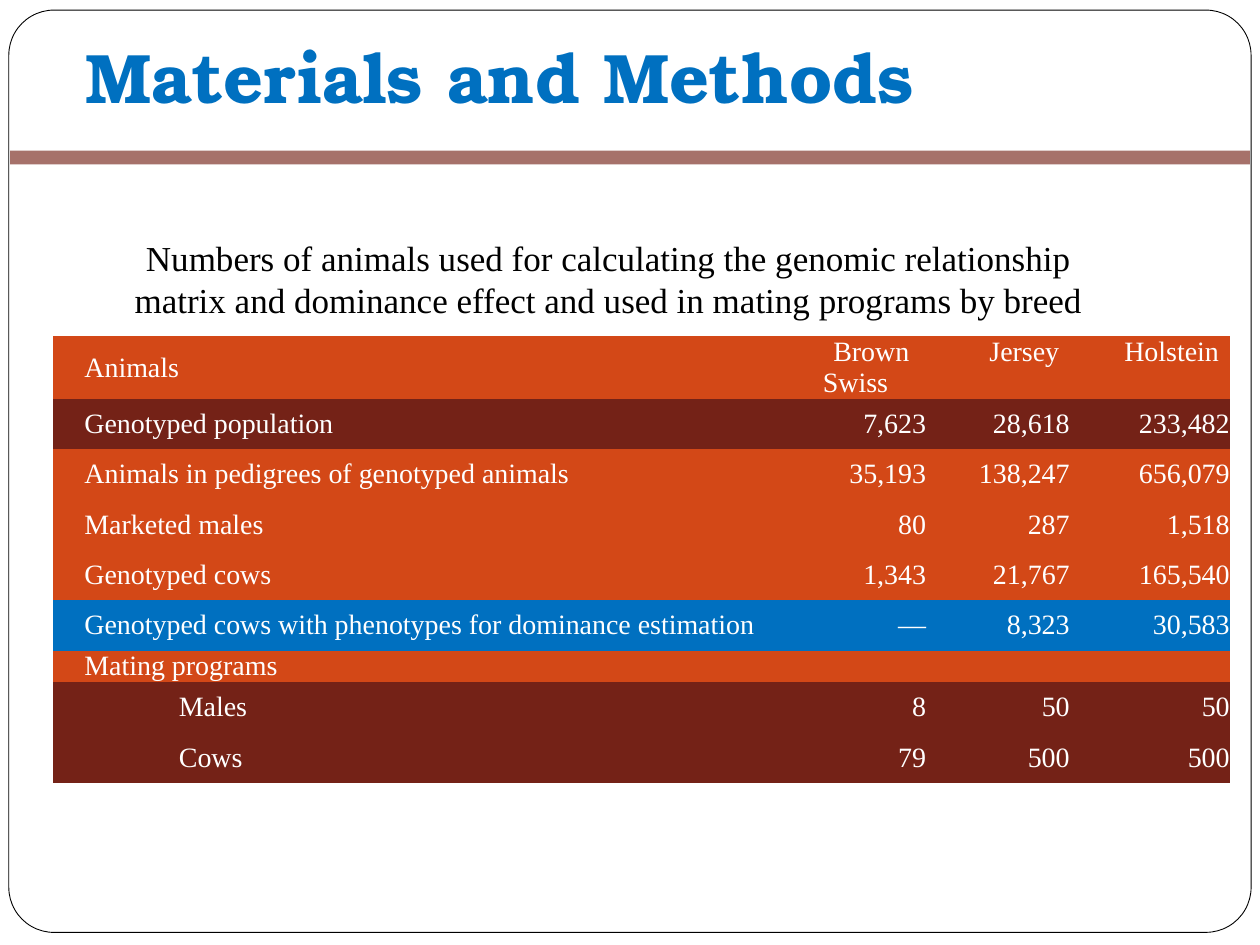
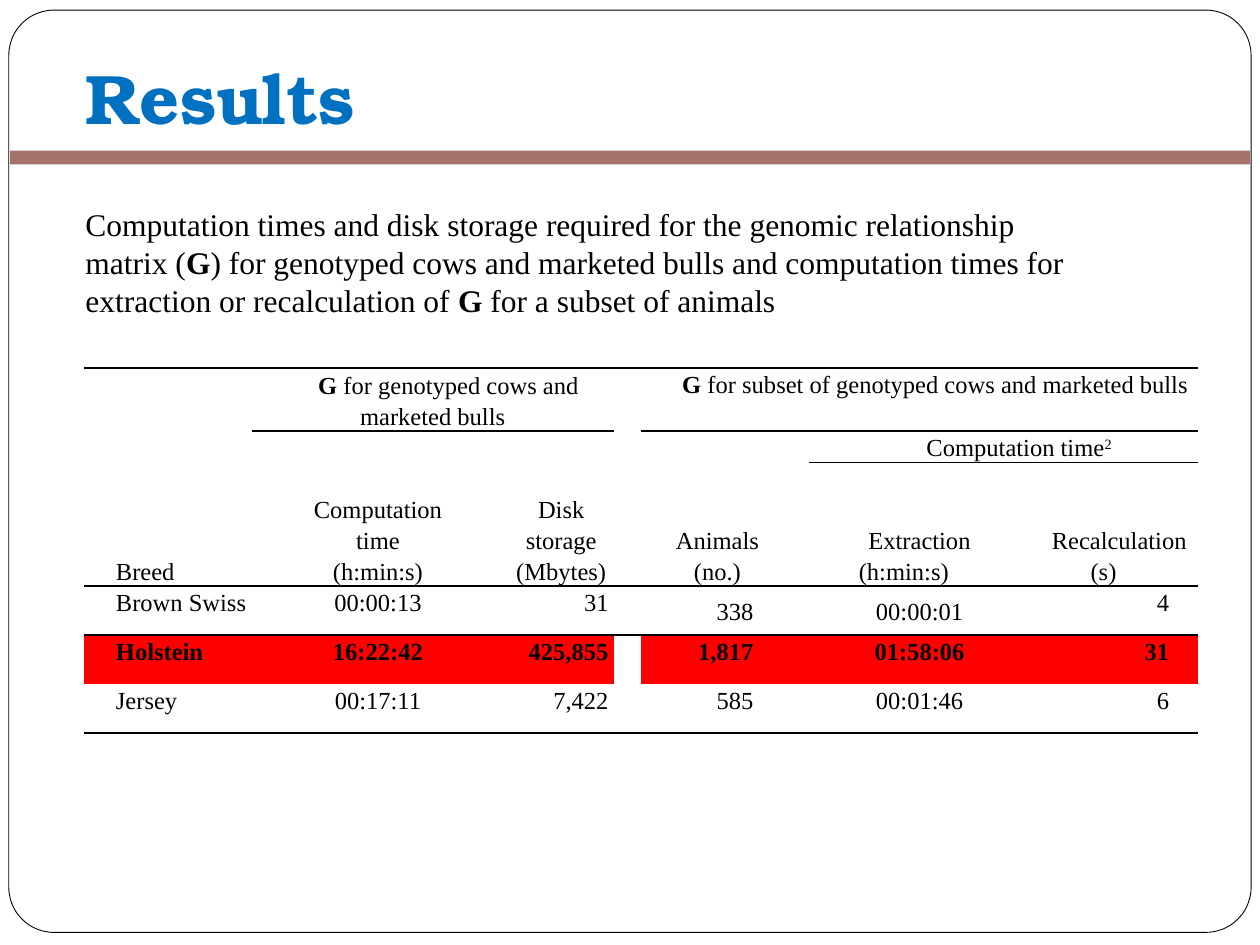
from lxml import etree
from pptx import Presentation
from pptx.dml.color import RGBColor
from pptx.enum import shapes, text
from pptx.oxml import ns
from pptx.util import Inches, Pt

BLACK, WHITE, BLUE = "000000", "FFFFFF", "0070C0"
ORANGE, MAROON, RED = "D34817", "742217", "FF0000"
TITLE_FONT, BODY_FONT = "TeX Gyre Bonum", "Times New Roman"
NO_TABLE_STYLE = "{2D5ABB26-0587-4C30-8999-92F81FD0307C}"
LEFT, CENTER, RIGHT = text.PP_ALIGN.LEFT, text.PP_ALIGN.CENTER, text.PP_ALIGN.RIGHT
TOP, MIDDLE, BOTTOM = text.MSO_ANCHOR.TOP, text.MSO_ANCHOR.MIDDLE, text.MSO_ANCHOR.BOTTOM


def rgb(value):
    return RGBColor.from_string(value)


def inches(*lengths):
    return [Inches(length) for length in lengths]


def style_font(font, size, color, name=BODY_FONT, bold=False):
    font.size, font.name, font.bold = Pt(size), name, bold
    font.color.rgb = rgb(color)


def add_marked_text(paragraph, marked):
    """Add runs; *stars* enclose bold text and ^ starts a superscript."""
    for i, part in enumerate(marked.split("*")):
        base, _, raised = part.partition("^")
        if base:
            run = paragraph.add_run()
            run.text = base
            if i % 2:
                run.font.bold = True
        if raised:
            run = paragraph.add_run()
            run.text = raised
            run.font._element.set("baseline", "30000")


def add_frame(slide):
    frame = slide.shapes.add_shape(
        shapes.MSO_SHAPE.ROUNDED_RECTANGLE, *inches(0.07, 0.08, 9.86, 7.32))
    frame.adjustments[0] = 0.049
    frame.shadow.inherit = False
    frame.fill.solid()
    frame.fill.fore_color.rgb = rgb(WHITE)
    frame.line.color.rgb = rgb(BLACK)
    frame.line.width = Pt(0.5)
    slide.shapes._spTree.insert(2, frame._element)


def add_title_rule(slide):
    rule = slide.shapes.add_connector(
        shapes.MSO_CONNECTOR.STRAIGHT, *inches(0.08, 1.25, 9.92, 1.25))
    rule.line.color.rgb = rgb(MAROON)
    rule.line.width = Pt(8)
    color = rule._element.spPr.find(".//" + ns.qn("a:srgbClr"))
    etree.SubElement(color, ns.qn("a:alpha")).set("val", "63000")
    etree.SubElement(rule._element.spPr, ns.qn("a:effectLst"))


def add_titled_slide(deck, heading, title_height):
    slide = deck.slides.add_slide(deck.slide_layouts[5])
    add_frame(slide)
    title = slide.shapes.title
    title.left, title.top, title.width, title.height = inches(
        0.58, 0.25, 8.5, title_height)
    frame = title.text_frame
    frame.text = heading
    frame.auto_size = text.MSO_AUTO_SIZE.NONE
    frame.vertical_anchor = BOTTOM
    frame.margin_bottom = Inches(0.1)
    frame.paragraphs[0].alignment = LEFT
    style_font(frame.paragraphs[0].font, 40, BLUE, TITLE_FONT, True)
    add_title_rule(slide)
    return slide


def add_caption(slide, box, marked, size, align):
    frame = slide.shapes.add_textbox(*inches(*box)).text_frame
    frame.word_wrap = True
    paragraph = frame.paragraphs[0]
    paragraph.alignment = align
    style_font(paragraph.font, size, BLACK)
    add_marked_text(paragraph, marked)


def add_plain_table(slide, left, top, widths, heights):
    table = slide.shapes.add_table(
        len(heights), len(widths),
        *inches(left, top, sum(widths), sum(heights))).table
    table.first_row = table.horz_banding = False
    table._tbl.tblPr.find(ns.qn("a:tableStyleId")).text = NO_TABLE_STYLE
    for column, width in zip(table.columns, widths):
        column.width = Inches(width)
    for row, height in zip(table.rows, heights):
        row.height = Inches(height)
    return table


def fill_cell(cell, marked, size, color, align=LEFT, anchor=TOP, fill=None,
              right=0, indent=0.25, spacing=None, bold=False):
    cell.margin_left = cell.margin_top = cell.margin_bottom = 0
    cell.margin_right = Inches(right)
    cell.vertical_anchor = anchor
    if fill:
        cell.fill.solid()
        cell.fill.fore_color.rgb = rgb(fill)
    else:
        cell.fill.background()
    for i, line in enumerate(marked.split("\n")):
        frame = cell.text_frame
        paragraph = frame.add_paragraph() if i else frame.paragraphs[0]
        paragraph.alignment = align
        paragraph.line_spacing = spacing
        paragraph._p.get_or_add_pPr().set("indent", str(Inches(indent)))
        style_font(paragraph.font, size, color, bold=bold)
        add_marked_text(paragraph, line)


def rule_cells(table, row, columns, side="T"):
    for column in columns:
        tc_pr = table.cell(row, column)._tc.get_or_add_tcPr()
        line = etree.Element(ns.qn("a:ln" + side), w=str(Pt(1)))
        solid = etree.SubElement(line, ns.qn("a:solidFill"))
        etree.SubElement(solid, ns.qn("a:srgbClr")).set("val", BLACK)
        tc_pr.insert(0, line)


def add_animal_table(slide, left, top):
    rows = [
        (ORANGE, "Animals", "Brown Swiss", "Jersey", "Holstein"),
        (MAROON, "Genotyped population", "7,623", "28,618", "233,482"),
        (ORANGE, "Animals in pedigrees of genotyped animals",
         "35,193", "138,247", "656,079"),
        (ORANGE, "Marketed males", "80", "287", "1,518"),
        (ORANGE, "Genotyped cows", "1,343", "21,767", "165,540"),
        (BLUE, "Genotyped cows with phenotypes for dominance estimation",
         "—", "8,323", "30,583"),
        (ORANGE, "Mating programs", "", "", ""),
        (MAROON, "Males", "8", "50", "50"),
        (MAROON, "Cows", "79", "500", "500"),
    ]
    heights = [0.49] + [0.4] * 5 + [0.25] + [0.4] * 2
    right_margins = [0, 0.07, 0.1, 0]
    table = add_plain_table(slide, left, top, [5.74, 1.26, 1.17, 1.17], heights)
    for r, (fill, *values) in enumerate(rows):
        for c, value in enumerate(values):
            breed_name = r == 0 and c > 0
            fill_cell(
                table.cell(r, c), value, 16, WHITE, fill=fill,
                align=CENTER if breed_name else RIGHT if c else LEFT,
                anchor=TOP if breed_name else MIDDLE,
                right=0 if breed_name else right_margins[c],
                indent=1 if value in ("Males", "Cows") else 0.25)


def add_timing_table(slide, left, top):
    widths = [1.33, 1.75, 0.03, 1.08, 0.22, 0.96, 0.37, 1.51, 0.08, 1.5]
    table = add_plain_table(slide, left, top, widths,
                            [0.5, 0.25, 0.98] + [0.39] * 3)
    headings = {
        (0, 0): ("Breed", LEFT, BOTTOM),
        (0, 1): ("*G* for genotyped cows and marketed bulls", CENTER, BOTTOM),
        (0, 5): ("*G *for subset of genotyped cows and marketed bulls", CENTER, TOP),
        (1, 1): ("Computation\ntime\n(h:min:s)", CENTER, BOTTOM),
        (1, 3): ("Disk\nstorage\n(Mbytes)", CENTER, BOTTOM),
        (1, 5): ("Animals\n(no.)", CENTER, BOTTOM),
        (1, 7): ("Computation time^2", CENTER, TOP),
        (2, 7): ("Extraction (h:min:s)", CENTER, BOTTOM),
        (2, 9): ("Recalculation (s)", CENTER, BOTTOM),
    }
    breeds = [
        ("Brown Swiss", "00:00:13", "31", "338", "00:00:01", "4"),
        ("Holstein", "16:22:42", "425,855", "1,817", "01:58:06", "31"),
        ("Jersey", "00:17:11", "7,422", "585", "00:01:46", "6"),
    ]
    # table column: (alignment, right margin)
    value_columns = {0: (LEFT, 0), 1: (CENTER, 0), 3: (RIGHT, 0.04),
                     5: (RIGHT, 0.07), 7: (CENTER, 0), 9: (RIGHT, 0.23)}
    gap_column = 4

    merges = [(0, 0, 2, 0), (0, 1, 0, 3), (0, 4, 2, 4), (0, 5, 0, 9), (1, 7, 1, 9)]
    merges += [(1, c, 2, c) for c in (1, 2, 3, 5, 6)]
    for first_row, first_col, last_row, last_col in merges:
        table.cell(first_row, first_col).merge(table.cell(last_row, last_col))

    for r in range(3):
        for c in range(len(widths)):
            label, align, anchor = headings.get((r, c), ("", LEFT, TOP))
            fill_cell(table.cell(r, c), label, 14, BLACK, align, anchor,
                      spacing=1.15)
    for r, values in enumerate(breeds, start=3):
        value_at = dict(zip(value_columns, values))
        highlighted = values[0] == "Holstein"
        for c in range(len(widths)):
            align, right = value_columns.get(c, (LEFT, 0))
            fill_cell(
                table.cell(r, c), value_at.get(c, ""), 14, BLACK, align,
                anchor=MIDDLE if r == 3 and c in (5, 7) else TOP,
                fill=RED if highlighted and c != gap_column else None,
                right=right, spacing=1.15, bold=highlighted)

    every_column = range(len(widths))
    rule_cells(table, 0, every_column)
    rule_cells(table, 1, [1, 2, 3, 5, 6, 7, 8, 9])
    rule_cells(table, 2, [7, 8, 9])
    rule_cells(table, 3, every_column)
    rule_cells(table, 5, every_column, "B")


def build_methods(deck):
    slide = add_titled_slide(deck, "Materials and Methods", 0.78)
    add_animal_table(slide, 0.42, 2.67)
    add_caption(
        slide, (0.83, 1.83, 8, 0.77),
        "Numbers of animals used for calculating the genomic relationship "
        "matrix and dominance effect and used in mating programs by breed",
        20, CENTER)


def build_results(deck):
    slide = add_titled_slide(deck, "Results", 0.95)
    add_timing_table(slide, 0.67, 2.92)
    add_caption(
        slide, (0.58, 1.58, 8.25, 1.01),
        "Computation times and disk storage required for the genomic "
        "relationship matrix (*G*) for genotyped cows and marketed bulls and "
        "computation times for extraction or recalculation of *G* for a "
        "subset of animals", 18, LEFT)


def main():
    deck = Presentation()
    deck.slide_width, deck.slide_height = inches(10, 7.5)
    build_methods(deck)
    build_results(deck)
    deck.save("out.pptx")


if __name__ == "__main__":
    main()
